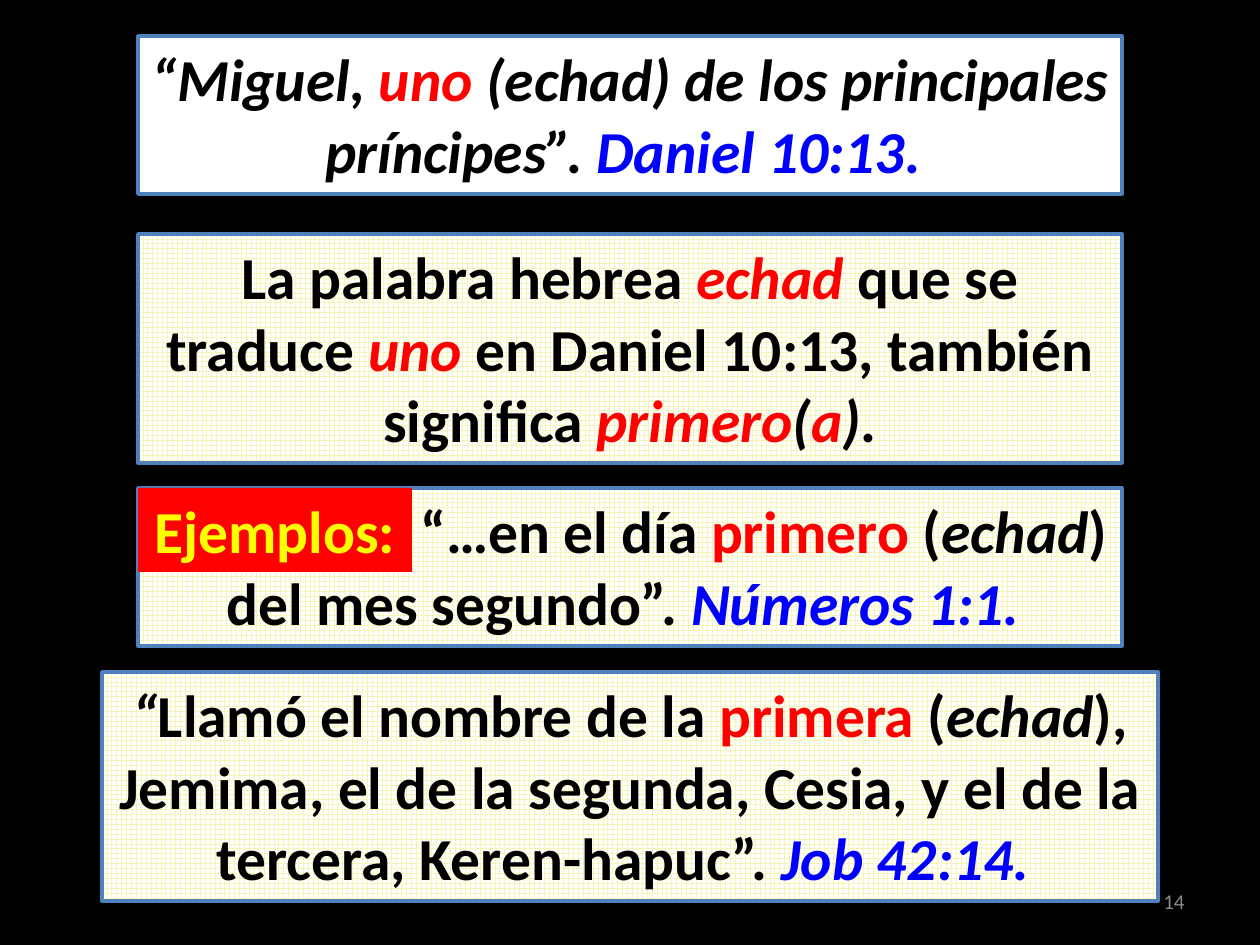
from lxml import etree
from pptx import Presentation, util as u
from pptx.dml.color import RGBColor
from pptx.enum import dml, shapes, text
from pptx.oxml.ns import qn

BLACK = RGBColor(0, 0, 0)
WHITE = RGBColor(255, 255, 255)
RED = RGBColor(255, 0, 0)
BLUE = RGBColor(0, 0, 255)
YELLOW = RGBColor(255, 255, 0)
CREAM = RGBColor(0xF7, 0xF4, 0xB7)
EDGE = RGBColor(0x4F, 0x81, 0xBD)
GRAY = RGBColor(0x8C, 0x8C, 0x8C)

WIDE, HIGH = 1260, 945
NUMBER = 14
PLAIN, SLANT = (BLACK, False), (BLACK, True)
KEY, TERM = (RED, False), (RED, True)
CITE, TAG = (BLUE, True), (YELLOW, False)

# top, width, height, first-line indent, gridded, runs
BOXES = [
    (36, 984, 158, 0, False, [
        ("“Miguel, ", SLANT), ("uno ", TERM),
        ("(echad) de los principales príncipes”. ", SLANT),
        ("Daniel 10:13. ", CITE)]),
    (234, 984, 229, 0, True, [
        ("La palabra hebrea ", PLAIN), ("echad ", TERM),
        ("que se traduce ", PLAIN), ("uno ", TERM),
        ("en Daniel 10:13, también significa ", PLAIN),
        ("primero", TERM), ("(", SLANT), ("a", TERM), (")", SLANT),
        (".", PLAIN)]),
    (488, 984, 158, 268, True, [
        ("“…en el día ", PLAIN), ("primero ", KEY), ("(", PLAIN),
        ("echad", SLANT), (") del mes segundo”. ", PLAIN),
        ("Números 1:1. ", CITE)]),
    (672, 1056, 229, 0, True, [
        ("“", SLANT), ("Llamó el nombre de la ", PLAIN),
        ("primera ", KEY), ("(", PLAIN), ("echad", SLANT),
        ("), Jemima, el de la segunda, Cesia, y el de la tercera, "
         "Keren-hapuc”. ", PLAIN),
        ("Job 42:14. ", CITE)]),
]
LABEL = (138, 488, 274, 84)
FOOT = (903, 876, 294, 50)


def px(n):
    return u.Emu(round(n * 914400 / 126))


def style(font, size, color, **flags):
    for name, val in dict(name="Calibri", size=u.Pt(size), **flags).items():
        setattr(font, name, val)
    font.color.rgb = color


def write(par, runs):
    """Add bold runs, each outlined in its own colour."""
    par.alignment = text.PP_ALIGN.CENTER
    for words, (color, slant) in runs:
        run = par.add_run()
        run.text = words
        style(run.font, 34, color, bold=True, italic=slant)
        line = etree.Element(qn("a:ln"), w=str(u.Pt(0.75)))
        fill = etree.SubElement(line, qn("a:solidFill"))
        etree.SubElement(fill, qn("a:srgbClr"), val=str(color))
        run.font._element.insert(0, line)


def panel(slide, at, runs):
    box = slide.shapes.add_shape(shapes.MSO_SHAPE.RECTANGLE, *map(px, at))
    box.shadow.inherit = False
    frame = box.text_frame
    frame.word_wrap = True
    frame.vertical_anchor = text.MSO_ANCHOR.TOP
    frame.auto_size = text.MSO_AUTO_SIZE.SHAPE_TO_FIT_TEXT
    write(frame.paragraphs[0], runs)
    return box


def paint(box, grid):
    if grid:
        box.fill.patterned()
        box.fill.pattern = dml.MSO_PATTERN.LARGE_GRID
        box.fill.fore_color.rgb = CREAM
        box.fill.back_color.rgb = WHITE
    else:
        box.fill.solid()
        box.fill.fore_color.rgb = WHITE
    box.line.color.rgb = EDGE
    box.line.width = u.Pt(2)


def number(slide):
    """Add the slide number as a live field."""
    box = slide.shapes.add_textbox(*map(px, FOOT))
    frame = box.text_frame
    frame.word_wrap = True
    frame.vertical_anchor = text.MSO_ANCHOR.MIDDLE
    par = frame.paragraphs[0]
    par.alignment = text.PP_ALIGN.RIGHT
    run = par.add_run()
    run.text = str(NUMBER)
    style(run.font, 12, GRAY)
    field = run._r
    field.tag = qn("a:fld")
    field.set("id", "{B6F15528-21DE-4FAA-801E-634DDDAF4B2B}")
    field.set("type", "slidenum")


def main():
    prs = Presentation()
    prs.slide_width, prs.slide_height = px(WIDE), px(HIGH)
    prs.element.set("firstSlideNum", str(NUMBER))
    slide = prs.slides.add_slide(prs.slide_layouts[6])
    back = slide.background.fill
    back.solid()
    back.fore_color.rgb = BLACK

    number(slide)
    for top, wide, high, indent, grid, runs in BOXES:
        box = panel(slide, ((WIDE - wide) / 2, top, wide, high), runs)
        paint(box, grid)
        if indent:
            props = box.text_frame.paragraphs[0]._p.get_or_add_pPr()
            props.set("indent", str(px(indent)))

    label = panel(slide, LABEL, [("Ejemplos:", TAG)])
    label.fill.solid()
    label.fill.fore_color.rgb = RED
    label.line.fill.background()
    prs.save("out.pptx")


if __name__ == "__main__":
    main()
